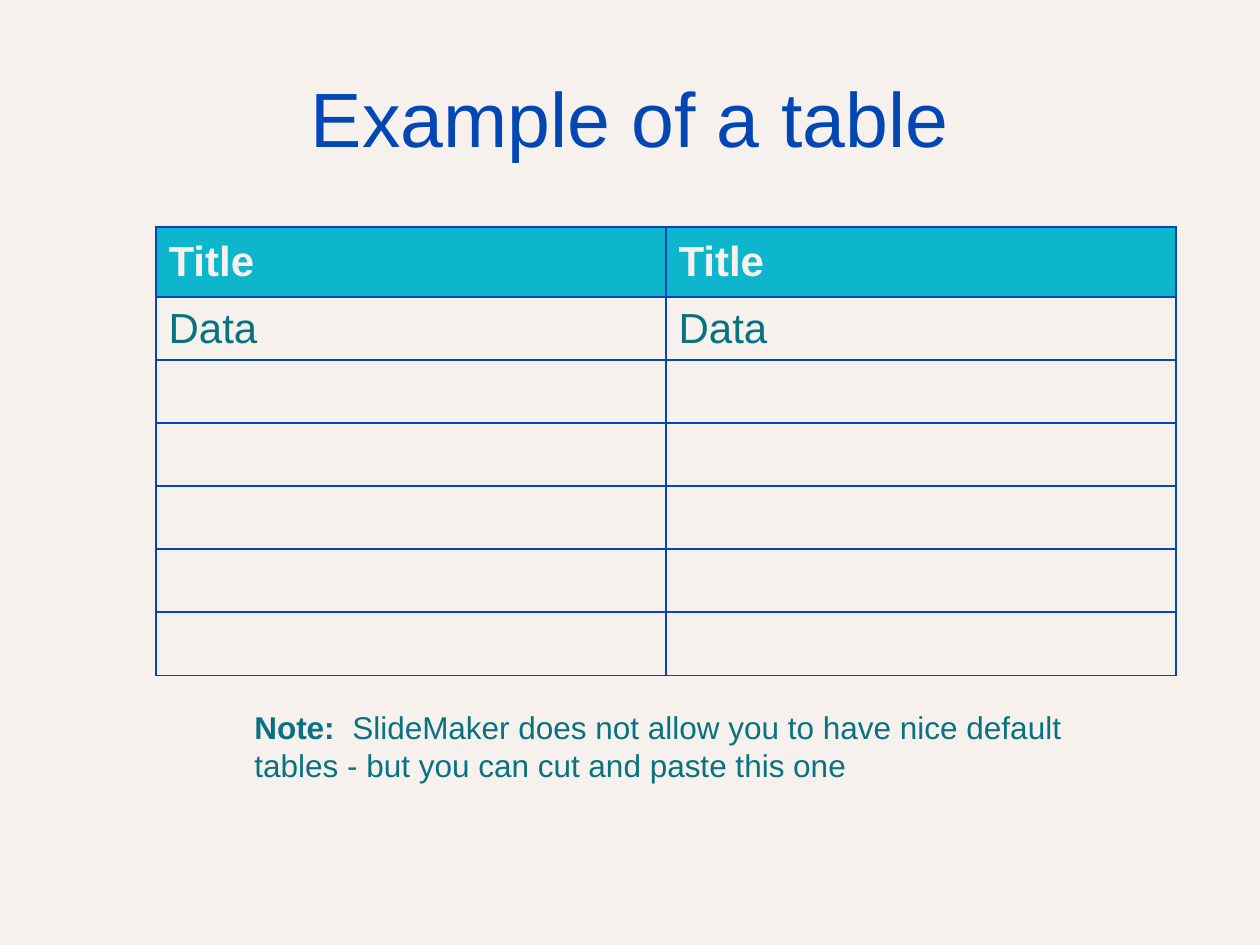
import pptx
import pptx.dml.color
import pptx.enum.text
import pptx.oxml.ns
import pptx.util
from lxml import etree

RGBColor = pptx.dml.color.RGBColor
Anchor = pptx.enum.text.MSO_ANCHOR
Align = pptx.enum.text.PP_ALIGN

PIXEL = 914400 // 126
CREAM = RGBColor(0xF6, 0xF1, 0xEC)
BLUE = RGBColor(0x03, 0x47, 0xB5)
CYAN = RGBColor(0x0D, 0xB6, 0xCC)
TEAL = RGBColor(0x08, 0x72, 0x80)

TABLE_ROWS = [["Title", "Title"], ["Data", "Data"]] + [["", ""]] * 5
HEADER_HEIGHT, ROW_HEIGHT, COLUMN_WIDTH = 70, 63, 510


def px(*lengths):
    return [pptx.util.Emu(length * PIXEL) for length in lengths]


def style(paragraph, size, color, bold=False):
    font = paragraph.font
    font.name = "Arial"
    font.size = pptx.util.Pt(size)
    font.color.rgb = color
    font.bold = bold


def add_text(slide, box, runs, size, color, anchor=Anchor.TOP, align=Align.LEFT):
    """Add a one-paragraph text box; runs are (text, bold) pairs."""
    frame = slide.shapes.add_textbox(*px(*box)).text_frame
    frame.word_wrap = True
    frame.vertical_anchor = anchor
    paragraph = frame.paragraphs[0]
    paragraph.alignment = align
    style(paragraph, size, color)
    for text, bold in runs:
        run = paragraph.add_run()
        run.text = text
        if bold:
            run.font.bold = True


def add_borders(cell, color, width):
    properties = cell._tc.get_or_add_tcPr()
    qn = pptx.oxml.ns.qn
    for index, side in enumerate(("lnL", "lnR", "lnT", "lnB")):
        line = etree.Element(qn(f"a:{side}"), w=str(pptx.util.Pt(width)))
        fill = etree.SubElement(line, qn("a:solidFill"))
        etree.SubElement(fill, qn("a:srgbClr"), val=str(color))
        properties.insert(index, line)


def add_table(slide, left, top, rows):
    columns = len(rows[0])
    heights = [HEADER_HEIGHT] + [ROW_HEIGHT] * (len(rows) - 1)
    box = px(left, top, COLUMN_WIDTH * columns, sum(heights))
    table = slide.shapes.add_table(len(rows), columns, *box).table
    table.first_row = False
    table.horz_banding = False
    for column in table.columns:
        column.width = px(COLUMN_WIDTH)[0]
    for row_index, texts in enumerate(rows):
        table.rows[row_index].height = px(heights[row_index])[0]
        is_header = row_index == 0
        for column_index, text in enumerate(texts):
            cell = table.cell(row_index, column_index)
            cell.text = text
            cell.vertical_anchor = Anchor.MIDDLE
            style(cell.text_frame.paragraphs[0], 24, CREAM if is_header else TEAL, is_header)
            if is_header:
                cell.fill.solid()
                cell.fill.fore_color.rgb = CYAN
            else:
                cell.fill.background()
            add_borders(cell, BLUE, 1)


def main():
    presentation = pptx.Presentation()
    presentation.slide_width, presentation.slide_height = px(1260, 945)
    slide = presentation.slides.add_slide(presentation.slide_layouts[6])
    background = slide.background.fill
    background.solid()
    background.fore_color.rgb = CREAM

    add_text(slide, (63, 38, 1134, 157), [("Example of a table", False)], 44, BLUE,
             Anchor.MIDDLE, Align.CENTER)
    add_table(slide, 156, 227, TABLE_ROWS)
    note = [
        ("Note:  ", True),
        ("SlideMaker does not allow you to have nice default tables"
         " - but you can cut and paste this one", False),
    ]
    add_text(slide, (242, 702, 911, 88), note, 18, TEAL)
    presentation.save("out.pptx")


if __name__ == "__main__":
    main()
